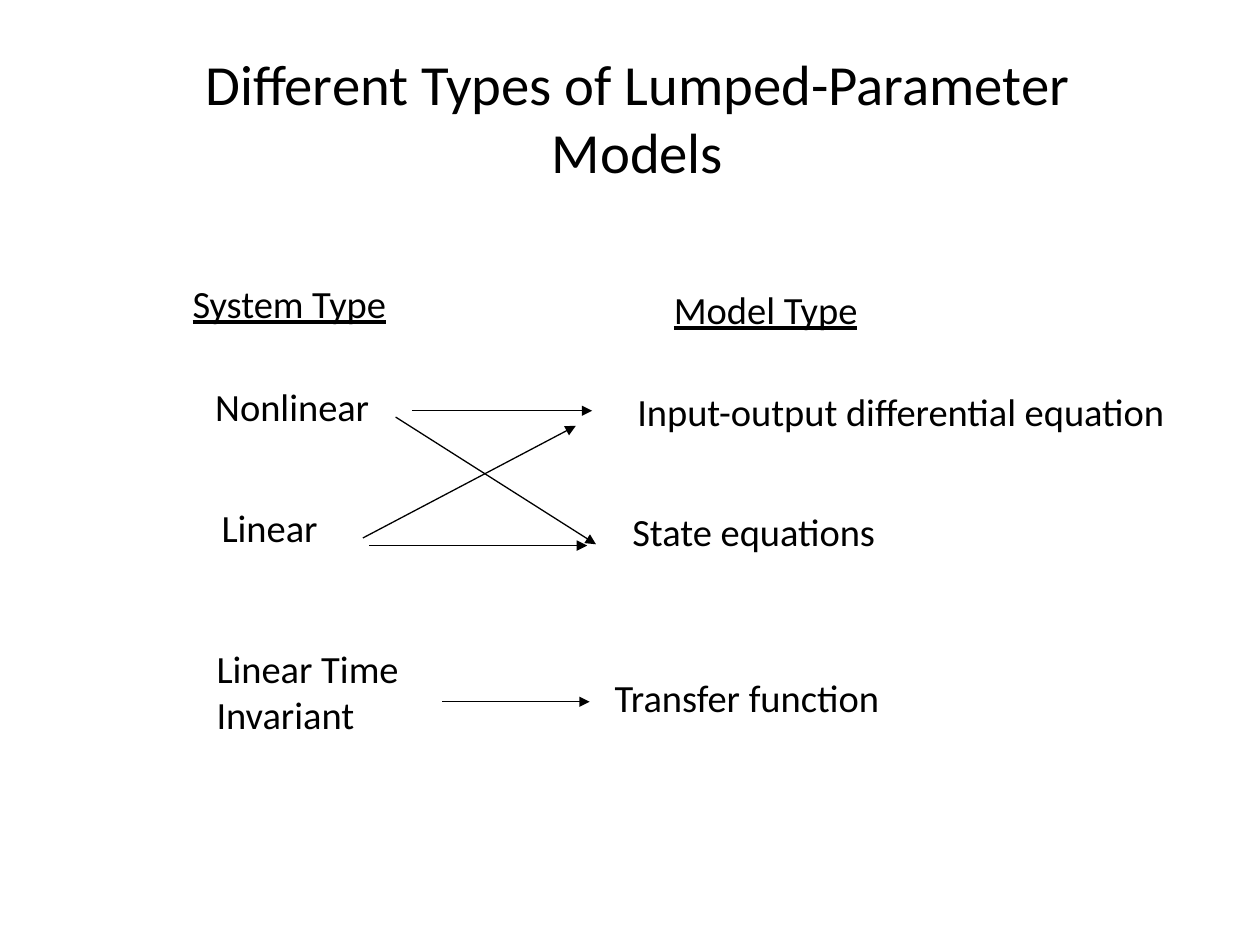
from pptx import Presentation
from pptx.dml.color import RGBColor
from pptx.enum import shapes, text
from pptx.oxml.ns import qn
from pptx.util import Inches, Pt
from lxml import etree

FONT = "Calibri"
BLACK = "000000"
LABEL_HEIGHT = 0.47

# Each column: box (left, top, width, height), heading and entries.
# Places are (left, top, width) relative to the column box.
SYSTEM_COLUMN = (
    (1.43, 2.17, 2.74, 3.74),
    ("System Type", 0, 0, 2.56),
    [("Nonlinear", 0.18, 0.82, 2.49),
     ("Linear", 0.23, 1.78, 1.58),
     ("Linear Time Invariant", 0.19, 2.9, 2.55)],
)
MODEL_COLUMN = (
    (4.78, 2.22, 5.22, 3.55),
    ("Model Type", 0.47, 0, 2.11),
    [("Input-output differential equation", 0.18, 0.81, 5.04),
     ("State equations", 0.14, 1.76, 3.69),
     ("Transfer function", 0, 3.08, 2.32)],
)
# Box between the columns, and arrow starts and ends relative to it
ARROW_BOX = (2.88, 3.26, 1.85, 2.31)
ARROWS = [
    ((0.39, 0), (1.82, 0)),
    ((0.26, 0.05), (1.85, 1.06)),
    ((0, 1.01), (1.69, 0.12)),
    ((0.05, 1.07), (1.78, 1.07)),
    ((0.63, 2.31), (1.8, 2.31)),
]


def color(hex_value):
    return RGBColor.from_string(hex_value)


def format_text(frame, size, underline=False):
    for para in frame.paragraphs:
        for span in para.runs:
            span.font.name = FONT
            span.font.size = Pt(size)
            span.font.color.rgb = color(BLACK)
            if underline:
                span.font.underline = True


def add_title(page, box):
    title = page.shapes.title
    title.left, title.top, title.width, title.height = map(Inches, box)
    frame = title.text_frame
    frame.text = "Different Types of Lumped-Parameter Models"
    frame.vertical_anchor = text.MSO_ANCHOR.MIDDLE
    frame.paragraphs[0].alignment = text.PP_ALIGN.CENTER
    format_text(frame, 32.4)


def add_label(page, box, wording, underline=False):
    label = page.shapes.add_textbox(*map(Inches, box))
    frame = label.text_frame
    frame.word_wrap = True
    frame.auto_size = text.MSO_AUTO_SIZE.SHAPE_TO_FIT_TEXT
    frame.text = wording
    format_text(frame, 22, underline)


def add_column(page, box, heading, entries):
    """Place an underlined heading and the entries below it."""
    left, top = box[:2]
    for item in [heading, *entries]:
        wording, x, y, width = item
        height = 0.84 if wording == "Linear Time Invariant" else LABEL_HEIGHT
        add_label(page, (left + x, top + y, width, height), wording,
                  underline=item is heading)


def add_arrows(page, box, arrows):
    left, top = box[:2]
    for (x1, y1), (x2, y2) in arrows:
        arrow = page.shapes.add_connector(
            shapes.MSO_CONNECTOR.STRAIGHT,
            Inches(left + x1), Inches(top + y1),
            Inches(left + x2), Inches(top + y2))
        arrow.line.color.rgb = color(BLACK)
        arrow.line.width = Pt(0.75)
        etree.SubElement(arrow.line._get_or_add_ln(), qn("a:tailEnd"),
                         type="triangle")
        etree.SubElement(arrow._element.spPr, qn("a:effectLst"))


def main():
    deck = Presentation()
    deck.slide_width, deck.slide_height = Inches(10), Inches(7.5)
    page = deck.slides.add_slide(deck.slide_layouts[5])
    add_title(page, (0.81, 0.3, 8.5, 1.25))
    add_column(page, *MODEL_COLUMN)
    add_column(page, *SYSTEM_COLUMN)
    add_arrows(page, ARROW_BOX, ARROWS)
    deck.save("out.pptx")


if __name__ == "__main__":
    main()
